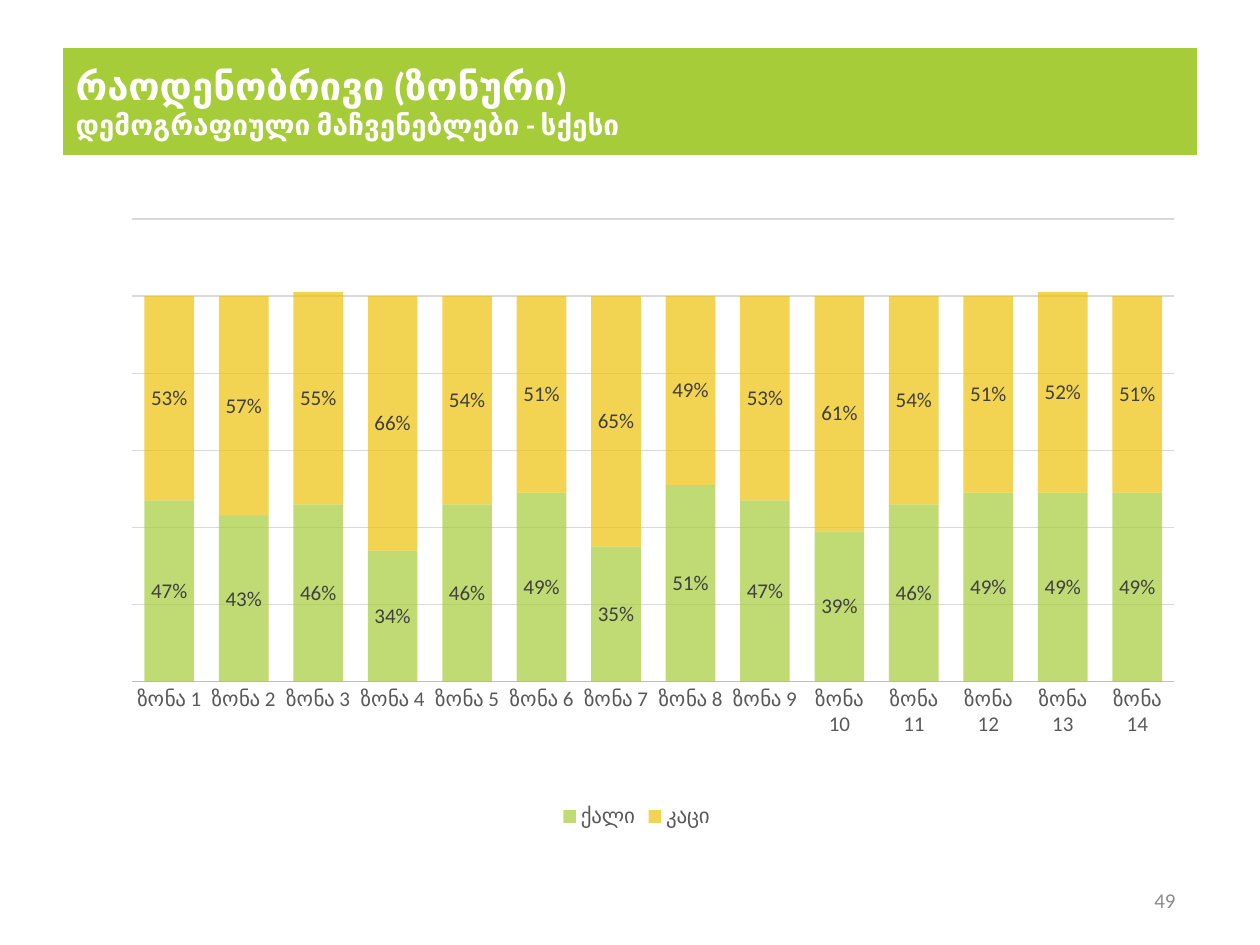
from lxml.etree import SubElement
from pptx import Presentation
from pptx.chart.data import CategoryChartData
from pptx.dml.color import RGBColor
from pptx.enum.chart import XL_CHART_TYPE, XL_LABEL_POSITION, XL_LEGEND_POSITION, XL_TICK_MARK
from pptx.enum.text import MSO_ANCHOR, MSO_AUTO_SIZE, PP_ALIGN
from pptx.oxml.ns import qn
from pptx.util import Emu, Pt

SCALE = 914400 / 126
FONT = "Calibri"
COLORS = {
    "green": "A6CD39", "gold": "EDC209", "white": "FFFFFF", "page": "8C8C8C",
    "axis": "595959", "label": "404040", "grid": "D9D9D9", "base": "BFBFBF",
}
ZONES = [f"ზონა {n}" for n in range(1, 15)]
SERIES = [
    ("ქალი", "green", [47, 43, 46, 34, 46, 49, 35, 51, 47, 39, 46, 49, 49, 49]),
    ("კაცი", "gold", [53, 57, 55, 66, 54, 51, 65, 49, 53, 61, 54, 51, 52, 51]),
]
PLOT = {"x": 0.05, "y": 0.03, "w": 0.93, "h": 0.73}


def px(n):
    return Emu(round(n * SCALE))


def color(name):
    return RGBColor.from_string(COLORS[name])


def style(font, size, name, bold=False):
    font.name = FONT
    font.size = Pt(size)
    font.bold = bold
    font.color.rgb = color(name)


def rule(line, name):
    line.width = Pt(0.75)
    line.color.rgb = color(name)


def add_title(slide, box):
    title = slide.shapes.title
    title.left, title.top, title.width, title.height = map(px, box)
    title.fill.solid()
    title.fill.fore_color.rgb = color("green")
    frame = title.text_frame
    frame.auto_size = MSO_AUTO_SIZE.NONE
    frame.vertical_anchor = MSO_ANCHOR.MIDDLE
    para = frame.paragraphs[0]
    para.alignment = PP_ALIGN.LEFT
    style(para.font, 22, "white", True)
    head = para.add_run()
    head.text = "რაოდენობრივი (ზონური)"
    style(head.font, 22, "white", True)
    para.add_line_break()
    sub = para.add_run()
    sub.text = "დემოგრაფიული მაჩვენებლები - სქესი"
    style(sub.font, 16, "white", True)


def set_plot(chart):
    area = chart._chartSpace.find(".//" + qn("c:plotArea"))
    for old in area.findall(qn("c:layout")):
        area.remove(old)
    layout = SubElement(area, qn("c:layout"))
    area.insert(0, layout)
    manual = SubElement(layout, qn("c:manualLayout"))
    parts = {"layoutTarget": "inner", "xMode": "edge", "yMode": "edge", **PLOT}
    for tag, val in parts.items():
        SubElement(manual, qn("c:" + tag)).set("val", str(val))


def style_bars(plot):
    plot.gap_width = 50
    plot.overlap = 100
    plot.vary_by_categories = False
    for bars, (_, name, _) in zip(plot.series, SERIES):
        fill = bars.format.fill
        fill.solid()
        fill.fore_color.rgb = color(name)
        tint = bars._element.find(".//" + qn("a:srgbClr"))
        SubElement(tint, qn("a:alpha")).set("val", "70000")
        labels = bars.data_labels
        labels.show_value = True
        labels.number_format = "0%"
        labels.number_format_is_linked = False
        labels.position = XL_LABEL_POSITION.CENTER
        style(labels.font, 12, "label")


def add_bars(slide, box):
    data = CategoryChartData(number_format="0%")
    data.categories = ZONES
    for name, _, shares in SERIES:
        data.add_series(name, [share / 100 for share in shares])
    chart = slide.shapes.add_chart(XL_CHART_TYPE.COLUMN_STACKED, *map(px, box), data).chart
    chart.has_title = False
    chart.font.name = FONT
    chart.font.size = Pt(10)
    set_plot(chart)
    style_bars(chart.plots[0])

    zones = chart.category_axis
    zones.major_tick_mark = XL_TICK_MARK.NONE
    rule(zones.format.line, "base")
    style(zones.tick_labels.font, 12, "axis")

    shares = chart.value_axis
    shares.minimum_scale, shares.maximum_scale, shares.major_unit = 0, 1.2, 0.2
    shares.has_major_gridlines = True
    rule(shares.major_gridlines.format.line, "grid")
    shares.visible = False

    chart.has_legend = True
    chart.legend.position = XL_LEGEND_POSITION.BOTTOM
    chart.legend.include_in_layout = False
    style(chart.legend.font, 12, "axis")


def add_page(slide, box):
    frame = slide.shapes.add_textbox(*map(px, box)).text_frame
    frame.word_wrap = True
    frame.vertical_anchor = MSO_ANCHOR.MIDDLE
    para = frame.paragraphs[0]
    para.text = "49"
    para.alignment = PP_ALIGN.RIGHT
    style(para.font, 12, "page")


def main():
    deck = Presentation()
    deck.slide_width, deck.slide_height = px(1260), px(945)
    slide = deck.slides.add_slide(deck.slide_layouts[5])
    add_title(slide, (63, 48, 1134, 107))
    add_bars(slide, (76, 200, 1121, 634))
    add_page(slide, (1136, 875, 52, 50))
    deck.save("out.pptx")


if __name__ == "__main__":
    main()
